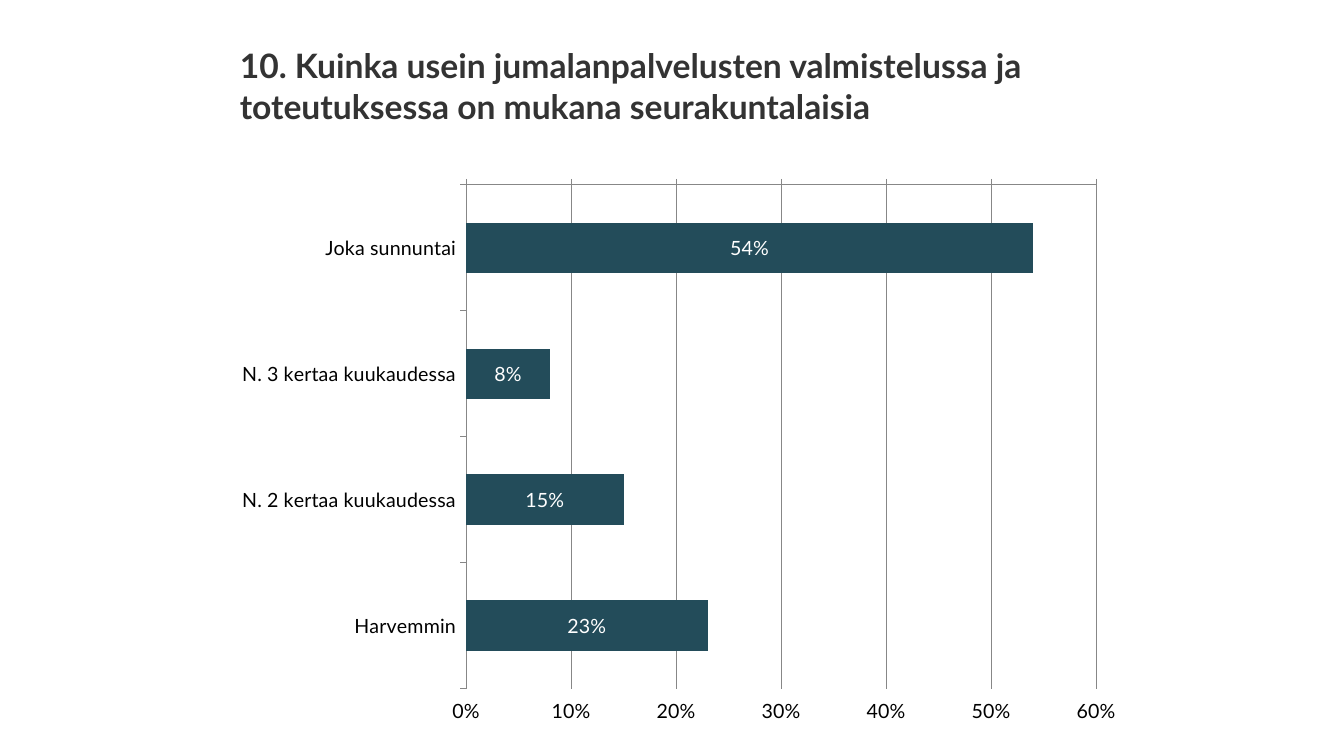
from dataclasses import dataclass

from lxml import etree
from pptx import Presentation
from pptx import util as u
from pptx.chart.data import CategoryChartData
from pptx.dml.color import RGBColor
from pptx.enum import chart as ch
from pptx.enum import text
from pptx.oxml.ns import qn

SCALE = 9525


@dataclass(frozen=True)
class Theme:
    font: str = "Lato"
    title: str = "333333"
    label: str = "000000"
    bar: str = "234C5A"
    on_bar: str = "FFFFFF"
    grid: str = "878787"
    title_size: int = 24
    label_size: int = 14


@dataclass(frozen=True)
class Box:
    x: int
    y: int
    w: int
    h: int

    def emu(self) -> tuple:
        return tuple(px(v) for v in (self.x, self.y, self.w, self.h))


@dataclass(frozen=True)
class Answer:
    label: str
    share: float


THEME = Theme()
TITLE_BOX = Box(219, 38, 855, 87)
CHART_BOX = Box(213, 166, 867, 534)
PLOT_BOX = Box(444, 176, 600, 480)
ANSWERS = [
    Answer("Joka sunnuntai", 0.54),
    Answer("N. 3 kertaa kuukaudessa", 0.08),
    Answer("N. 2 kertaa kuukaudessa", 0.15),
    Answer("Harvemmin", 0.23),
]


def px(n: int) -> u.Emu:
    return u.Emu(n * SCALE)


def style_font(font, *, size: int, color: str, bold: bool = False) -> None:
    font.name = THEME.font
    font.size = u.Pt(size)
    font.bold = bold
    font.color.rgb = RGBColor.from_string(color)


def add_text(slide, box: Box, content: str, *, size: int, color: str, bold: bool = False) -> None:
    tf = slide.shapes.add_textbox(*box.emu()).text_frame
    tf.word_wrap = True
    tf.vertical_anchor = text.MSO_ANCHOR.MIDDLE
    r = tf.paragraphs[0].add_run()
    r.text = content
    style_font(r.font, size=size, color=color, bold=bold)


def style_line(line) -> None:
    line.color.rgb = RGBColor.from_string(THEME.grid)
    line.width = u.Pt(0.75)


def place_plot(chart, frame: Box, plot: Box) -> None:
    area = chart._chartSpace.chart.plotArea
    for old in area.findall(qn("c:layout")):
        area.remove(old)
    layout = etree.Element(qn("c:layout"))
    manual = etree.SubElement(layout, qn("c:manualLayout"))
    settings = {
        "layoutTarget": "inner",
        "xMode": "edge",
        "yMode": "edge",
        "x": (plot.x - frame.x) / frame.w,
        "y": (plot.y - frame.y) / frame.h,
        "w": plot.w / frame.w,
        "h": plot.h / frame.h,
    }
    for name, value in settings.items():
        etree.SubElement(manual, qn(f"c:{name}")).set("val", str(value))
    area.insert(0, layout)


def add_answer_chart(slide, box: Box, plot_box: Box, answers: list[Answer]) -> None:
    data = CategoryChartData(number_format="0%")
    data.categories = [a.label for a in answers]
    data.add_series("Series 1", [a.share for a in answers])
    kind = ch.XL_CHART_TYPE.BAR_CLUSTERED
    chart = slide.shapes.add_chart(kind, *box.emu(), data).chart
    chart.has_legend = False
    chart.has_title = False
    style_font(chart.font, size=THEME.label_size, color=THEME.label)
    place_plot(chart, box, plot_box)

    cat, val = chart.category_axis, chart.value_axis
    for axis in (cat, val):
        axis.major_tick_mark = ch.XL_TICK_MARK.OUTSIDE
        axis.minor_tick_mark = ch.XL_TICK_MARK.NONE
        style_line(axis.format.line)
    cat.reverse_order = True
    cat.has_major_gridlines = False
    cat.tick_label_position = ch.XL_TICK_LABEL_POSITION.LOW
    val.tick_label_position = ch.XL_TICK_LABEL_POSITION.HIGH
    val.minimum_scale, val.maximum_scale, val.major_unit = 0, 0.6, 0.1
    val.has_major_gridlines = True
    style_line(val.major_gridlines.format.line)
    val.tick_labels.number_format = "0%"
    val.tick_labels.number_format_is_linked = False

    plot = chart.plots[0]
    plot.gap_width = 150
    plot.vary_by_categories = False
    fill = plot.series[0].format.fill
    fill.solid()
    fill.fore_color.rgb = RGBColor.from_string(THEME.bar)
    plot.has_data_labels = True
    labels = plot.data_labels
    labels.show_value = True
    labels.number_format = "0%"
    labels.number_format_is_linked = False
    labels.position = ch.XL_LABEL_POSITION.CENTER
    style_font(labels.font, size=THEME.label_size, color=THEME.on_bar)


def main() -> None:
    prs = Presentation()
    prs.slide_width, prs.slide_height = px(1280), px(720)
    slide = prs.slides.add_slide(prs.slide_layouts[6])
    add_text(
        slide,
        TITLE_BOX,
        "10. Kuinka usein jumalanpalvelusten valmistelussa ja toteutuksessa on mukana seurakuntalaisia",
        size=THEME.title_size,
        color=THEME.title,
        bold=True,
    )
    add_answer_chart(slide, CHART_BOX, PLOT_BOX, ANSWERS)
    prs.save("out.pptx")


if __name__ == "__main__":
    main()
